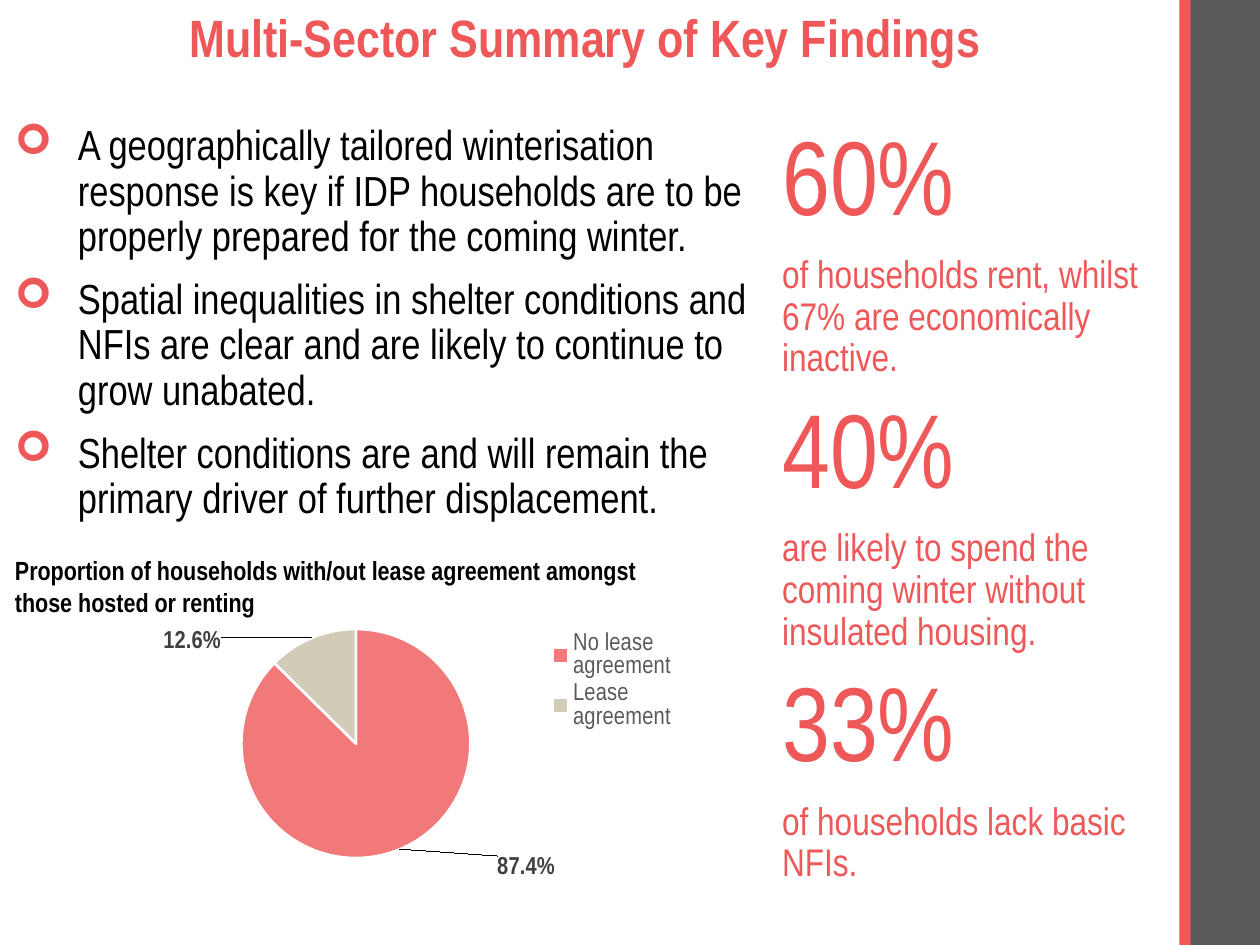
from lxml import etree
from pptx import Presentation
from pptx.chart.data import CategoryChartData
from pptx.dml.color import RGBColor
from pptx.enum.chart import XL_CHART_TYPE, XL_LABEL_POSITION, XL_LEGEND_POSITION
from pptx.enum.shapes import MSO_SHAPE
from pptx.enum.text import MSO_ANCHOR, MSO_AUTO_SIZE, PP_ALIGN
from pptx.oxml import parse_xml
from pptx.oxml.ns import nsdecls, qn
from pptx.util import Inches, Pt

FONT = "Arial Narrow"
RED = RGBColor(0xEE, 0x58, 0x59)
BEIGE = RGBColor(0xD2, 0xCB, 0xB8)
GREY = RGBColor(0x5A, 0x5A, 0x5A)
LEGEND_GREY = RGBColor(0x59, 0x59, 0x59)
LABEL_GREY = RGBColor(0x40, 0x40, 0x40)
BLACK = RGBColor(0, 0, 0)
WHITE = RGBColor(0xFF, 0xFF, 0xFF)
RECTANGLE = MSO_SHAPE.RECTANGLE
PIE = XL_CHART_TYPE.PIE
OUTSIDE_END = XL_LABEL_POSITION.OUTSIDE_END
LEGEND_BOTTOM = XL_LEGEND_POSITION.BOTTOM
MIDDLE = MSO_ANCHOR.MIDDLE
NO_AUTOFIT = MSO_AUTO_SIZE.NONE
CENTER = PP_ALIGN.CENTER


def write_text(frame, paragraphs, color=BLACK, bold=False, spacing=None, before=0,
               align=None, bullet=None):
    """Fill a text frame from (text, point size) pairs."""
    frame.word_wrap = True
    for index, (text, size) in enumerate(paragraphs):
        para = frame.add_paragraph() if index else frame.paragraphs[0]
        if bullet:
            properties = para._p.get_or_add_pPr()
            properties.set("marL", str(Inches(0.5)))
            properties.set("indent", str(-Inches(0.5)))
            bullet_color = etree.SubElement(properties, qn("a:buClr"))
            etree.SubElement(bullet_color, qn("a:srgbClr"), val=str(RED))
            etree.SubElement(properties, qn("a:buFont"), typeface="Wingdings")
            etree.SubElement(properties, qn("a:buChar"), char=bullet)
        para.alignment = align
        para.line_spacing = spacing
        if index:
            para.space_before = Pt(before)
        span = para.add_run()
        span.text = text
        span.font.name = FONT
        span.font.size = Pt(size)
        span.font.bold = bold
        span.font.color.rgb = color


def manual_layout(**values):
    """Build a chart layout element from its child names and values."""
    children = "".join(f'<c:{name} val="{value}"/>' for name, value in values.items())
    return parse_xml(f'<c:layout {nsdecls("c")}><c:manualLayout>{children}'
                     "</c:manualLayout></c:layout>")


deck = Presentation()
deck.slide_width = Inches(10)
deck.slide_height = Inches(7.5)
page = deck.slides.add_slide(deck.slide_layouts[5])

# Side bands
for left, width, color in [(9.43, 0.57, GREY), (9.36, 0.09, RED)]:
    band = page.shapes.add_shape(RECTANGLE, Inches(left), 0, Inches(width), deck.slide_height)
    band.shadow.inherit = False
    band.fill.solid()
    band.fill.fore_color.rgb = color
    band.line.fill.background()

# Title
title = page.shapes.title
title.left, title.top = Inches(0.3), Inches(0)
title.width, title.height = Inches(8.69), Inches(0.64)
title.text_frame.auto_size = NO_AUTOFIT
title.text_frame.vertical_anchor = MIDDLE
write_text(title.text_frame, [("Multi-Sector Summary of Key Findings", 30)],
           color=RED, bold=True, spacing=0.9, align=CENTER)

# Findings on the left
findings = [
    "A geographically tailored winterisation response is key if IDP households are to be "
    "properly prepared for the coming winter.",
    "Spatial inequalities in shelter conditions and NFIs are clear and are likely to "
    "continue to grow unabated.",
    "Shelter conditions are and will remain the primary driver of further displacement.",
]
findings_box = page.shapes.add_textbox(Inches(0.02), Inches(0.94), Inches(6.11), Inches(3.28))
write_text(findings_box.text_frame, [(text, 24) for text in findings],
           spacing=0.9, before=10, bullet="➢")

# Key figures on the right
figures = [
    ("60%", "of households rent, whilst 67% are economically inactive."),
    ("40%", "are likely to spend the coming winter without insulated housing."),
    ("33%", "of households lack basic NFIs."),
]
figures_box = page.shapes.add_textbox(Inches(6.11), Inches(0.94), Inches(3.27), Inches(6.56))
write_text(figures_box.text_frame,
           [pair for figure, text in figures for pair in ((figure, 60), (text, 22))],
           color=RED, spacing=0.9, before=10)

# Lease agreement pie
data = CategoryChartData(number_format="0.0%")
data.categories = ["No lease agreement", "Lease agreement"]
data.add_series("Series 1", [0.874, 0.126])
chart = page.shapes.add_chart(PIE, Inches(0.15), Inches(4.66), Inches(5.35), Inches(3.03),
                              data).chart
chart.has_title = False
chart.font.name = FONT
chart.font.size = Pt(14)
chart.font.color.rgb = BLACK

chart.has_legend = True
legend = chart.legend
legend.position = LEGEND_BOTTOM
legend.include_in_layout = False
legend.font.name = FONT
legend.font.size = Pt(14)
legend.font.color.rgb = LEGEND_GREY
legend._element.find(qn("c:legendPos")).addnext(
    manual_layout(xMode="edge", yMode="edge", x=0.76, y=0.11, w=0.24, h=0.27))

plot = chart.plots[0]
plot.vary_by_categories = True
plot_area = chart._chartSpace.chart.plotArea
for old_layout in plot_area.findall(qn("c:layout")):
    plot_area.remove(old_layout)
plot_area.insert(0, manual_layout(layoutTarget="inner", xMode="edge", yMode="edge",
                                  x=0.33, y=0.11, w=0.34, h=0.6))

series = plot.series[0]
labels = series.data_labels
labels.show_value = True
labels.number_format = "0.0%"
labels.number_format_is_linked = False
labels.position = OUTSIDE_END
slices = [(RED, 0.14, 0), (BEIGE, -0.13, 0.06)]
for index, (color, shift_x, shift_y) in enumerate(slices):
    point = series.points[index]
    point.format.fill.solid()
    point.format.fill.fore_color.rgb = color
    point.format.line.color.rgb = WHITE
    point.format.line.width = Pt(1.5)
    label = point.data_label
    label.position = OUTSIDE_END
    label._dLbl.find(qn("c:idx")).addnext(manual_layout(x=shift_x, y=shift_y))
    for font in (labels.font, label.font):
        font.name = FONT
        font.size = Pt(14)
        font.bold = True
        font.color.rgb = LABEL_GREY
red_fill = series.points[0].format.fill._xPr.find(qn("a:solidFill"))
etree.SubElement(red_fill[0], qn("a:alpha"), val="80000")

# Chart caption
caption_box = page.shapes.add_textbox(Inches(0.02), Inches(4.35), Inches(5.51), Inches(0.61))
write_text(caption_box.text_frame,
           [("Proportion of households with/out lease agreement amongst those hosted or renting",
             15)], bold=True)

deck.save("out.pptx")
